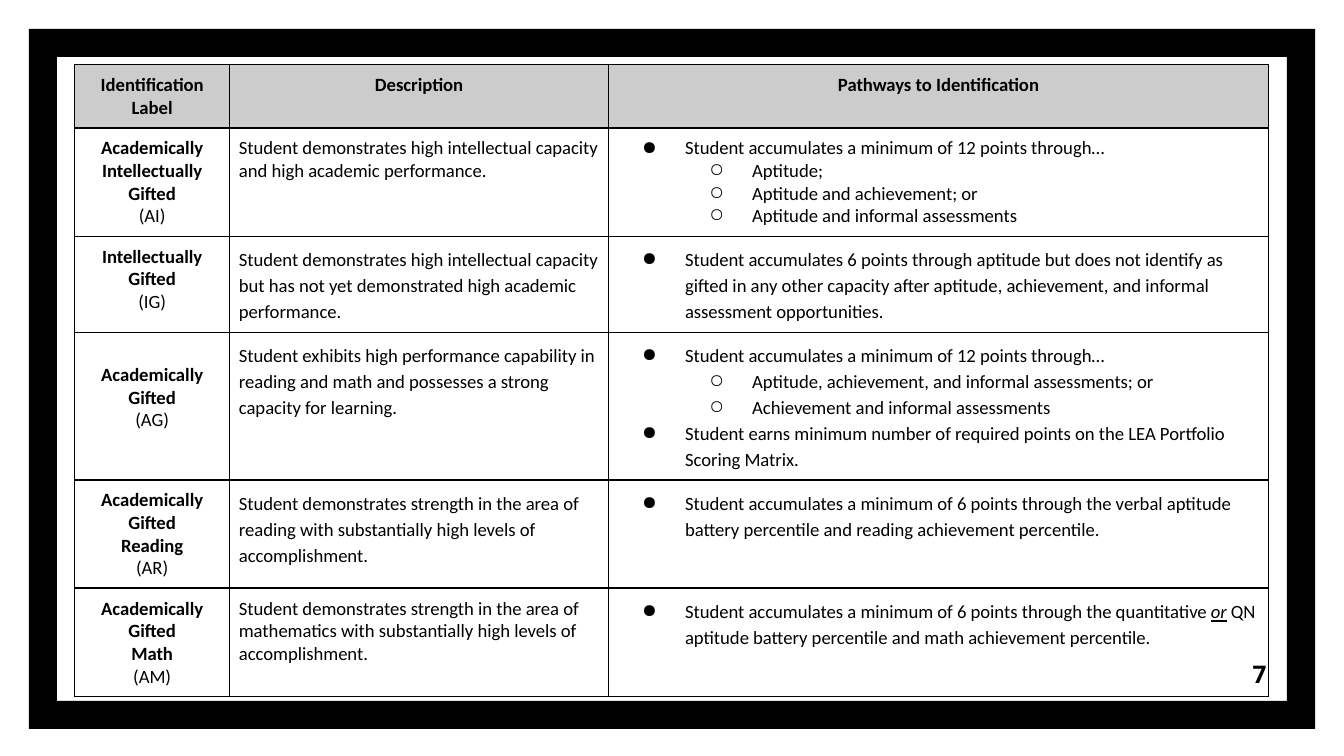
from dataclasses import dataclass

from lxml.etree import SubElement
from pptx import Presentation
from pptx.dml.color import RGBColor
from pptx.enum.shapes import MSO_SHAPE
from pptx.enum.text import MSO_ANCHOR, PP_ALIGN
from pptx.oxml.ns import qn
from pptx.util import Pt


@dataclass(frozen=True)
class Theme:
    ink: RGBColor = RGBColor(0, 0, 0)
    header: RGBColor = RGBColor(0xCC, 0xCC, 0xCC)
    table_font: str = "Calibri"
    number_font: str = "Open Sans"
    table_size: int = 10
    number_size: int = 13
    rule: int = 1
    inset: int = 5
    loose: float = 1.15


THEME = Theme()
BULLETS = "●○"
COLUMN_WIDTHS = [83, 203, 353.5]
ROW_HEIGHTS = [24.5, 57, 49, 62.5, 57, 57]
HEADINGS = ["Identification Label", "Description", "Pathways to Identification"]


@dataclass
class Category:
    names: list
    code: str
    description: str
    pathways: list  # (level, text or list of spans)
    description_spacing: float = THEME.loose
    pathway_spacing: float = THEME.loose
    label_drop: int = 0


TWELVE_POINTS = "Student accumulates a minimum of 12 points through…"
CATEGORIES = [
    Category(["Academically", "Intellectually Gifted"], "(AI)",
             "Student demonstrates high intellectual capacity and high academic performance.",
             [(0, TWELVE_POINTS),
              (1, "Aptitude;"),
              (1, "Aptitude and achievement; or"),
              (1, "Aptitude and informal assessments")],
             description_spacing=1.0, pathway_spacing=1.0),
    Category(["Intellectually Gifted"], "(IG)",
             "Student demonstrates high intellectual capacity but has not yet "
             "demonstrated high academic performance.",
             [(0, "Student accumulates 6 points through aptitude but does not identify as "
                  "gifted in any other capacity after aptitude, achievement, and informal "
                  "assessment opportunities.")]),
    Category(["Academically Gifted"], "(AG)",
             "Student exhibits high performance capability in reading and math and "
             "possesses a strong capacity for learning.",
             [(0, TWELVE_POINTS),
              (1, "Aptitude, achievement, and informal assessments; or"),
              (1, "Achievement and informal assessments"),
              (0, "Student earns minimum number of required points on the LEA Portfolio "
                  "Scoring Matrix.")],
             label_drop=12),
    Category(["Academically Gifted", "Reading"], "(AR)",
             "Student demonstrates strength in the area of reading with substantially "
             "high levels of accomplishment.",
             [(0, "Student accumulates a minimum of 6 points through the verbal aptitude "
                  "battery percentile and reading achievement percentile.")]),
    Category(["Academically Gifted", "Math"], "(AM)",
             "Student demonstrates strength in the area of mathematics with "
             "substantially high levels of accomplishment.",
             [(0, ["Student accumulates a minimum of 6 points through the quantitative ",
                   ("or",),
                   " QN aptitude battery percentile and math achievement percentile."])],
             description_spacing=1.0),
]


def style_font(font, name, size, bold=False):
    font.name, font.size, font.bold = name, Pt(size), bold
    font.color.rgb = THEME.ink


def write_paragraph(frame, index, content, bold=False, align=PP_ALIGN.LEFT, spacing=1.0):
    """Write one paragraph; a one-item tuple in content marks an emphasised span."""
    para = frame.paragraphs[0] if index == 0 else frame.add_paragraph()
    para.alignment, para.line_spacing = align, spacing
    for part in [content] if isinstance(content, str) else content:
        span = para.add_run()
        if isinstance(part, tuple):
            span.text = part[0]
            span.font.italic = span.font.underline = True
        else:
            span.text = part
    style_font(para.font, THEME.table_font, THEME.table_size, bold)
    return para


def add_bullet(para, level):
    para.level = level
    properties = para._p.get_or_add_pPr()
    properties.set("marL", str(Pt(36 * (level + 1))))
    properties.set("indent", str(-Pt(23)))
    bullet = SubElement(properties, qn("a:buChar"))
    bullet.set("char", BULLETS[level])
    properties.find(qn("a:defRPr")).addprevious(bullet)


def format_cell(cell, fill=None):
    cell.margin_left = cell.margin_right = Pt(THEME.inset)
    cell.margin_top = cell.margin_bottom = Pt(THEME.inset)
    properties = cell._tc.get_or_add_tcPr()
    for side in ("lnL", "lnR", "lnT", "lnB"):
        line = SubElement(properties, qn(f"a:{side}"), w=str(Pt(THEME.rule)))
        solid = SubElement(line, qn("a:solidFill"))
        SubElement(solid, qn("a:srgbClr"), val=str(THEME.ink))
    if fill is None:
        cell.fill.background()
    else:
        cell.fill.solid()
        cell.fill.fore_color.rgb = fill


def fill_category_row(cells, category):
    label, description, pathways = cells
    for cell in cells:
        format_cell(cell)
    label.margin_top = Pt(THEME.inset + category.label_drop)
    for index, name in enumerate(category.names):
        write_paragraph(label.text_frame, index, name, bold=True, align=PP_ALIGN.CENTER)
    write_paragraph(label.text_frame, len(category.names), category.code,
                    align=PP_ALIGN.CENTER)
    write_paragraph(description.text_frame, 0, category.description,
                    spacing=category.description_spacing)
    for index, (level, content) in enumerate(category.pathways):
        para = write_paragraph(pathways.text_frame, index, content,
                               spacing=category.pathway_spacing)
        add_bullet(para, level)


def add_identification_table(page, left, top):
    table = page.shapes.add_table(
        len(ROW_HEIGHTS), len(COLUMN_WIDTHS), Pt(left), Pt(top),
        Pt(sum(COLUMN_WIDTHS)), Pt(sum(ROW_HEIGHTS))).table
    table.first_row = table.horz_banding = False
    for column, width in zip(table.columns, COLUMN_WIDTHS):
        column.width = Pt(width)
    for row, height in zip(table.rows, ROW_HEIGHTS):
        row.height = Pt(height)
    header, *body = table.rows
    for cell, heading in zip(header.cells, HEADINGS):
        format_cell(cell, THEME.header)
        write_paragraph(cell.text_frame, 0, heading, bold=True, align=PP_ALIGN.CENTER)
    for row, category in zip(body, CATEGORIES):
        fill_category_row(list(row.cells), category)


def add_border(page, left, top, width, height):
    border = page.shapes.add_shape(MSO_SHAPE.FRAME, Pt(left), Pt(top), Pt(width), Pt(height))
    border.adjustments[0] = 0.04
    border.shadow.inherit = False
    border.fill.solid()
    border.fill.fore_color.rgb = THEME.ink
    border.line.fill.background()


def add_page_number(page, number, left, top, width, height):
    box = page.shapes.add_textbox(Pt(left), Pt(top), Pt(width), Pt(height))
    frame = box.text_frame
    frame.word_wrap = True
    frame.vertical_anchor = MSO_ANCHOR.MIDDLE
    para = frame.paragraphs[0]
    para.add_run().text = str(number)
    para.alignment = PP_ALIGN.RIGHT
    style_font(para.font, THEME.number_font, THEME.number_size, bold=True)


def main():
    deck = Presentation()
    deck.slide_width, deck.slide_height = Pt(720), Pt(405)
    page = deck.slides.add_slide(deck.slide_layouts[6])
    add_border(page, 15.5, 15.5, 689, 375)
    add_page_number(page, 7, 642.5, 345.5, 43, 31)
    add_identification_table(page, 40, 34.5)
    deck.save("out.pptx")


if __name__ == "__main__":
    main()
